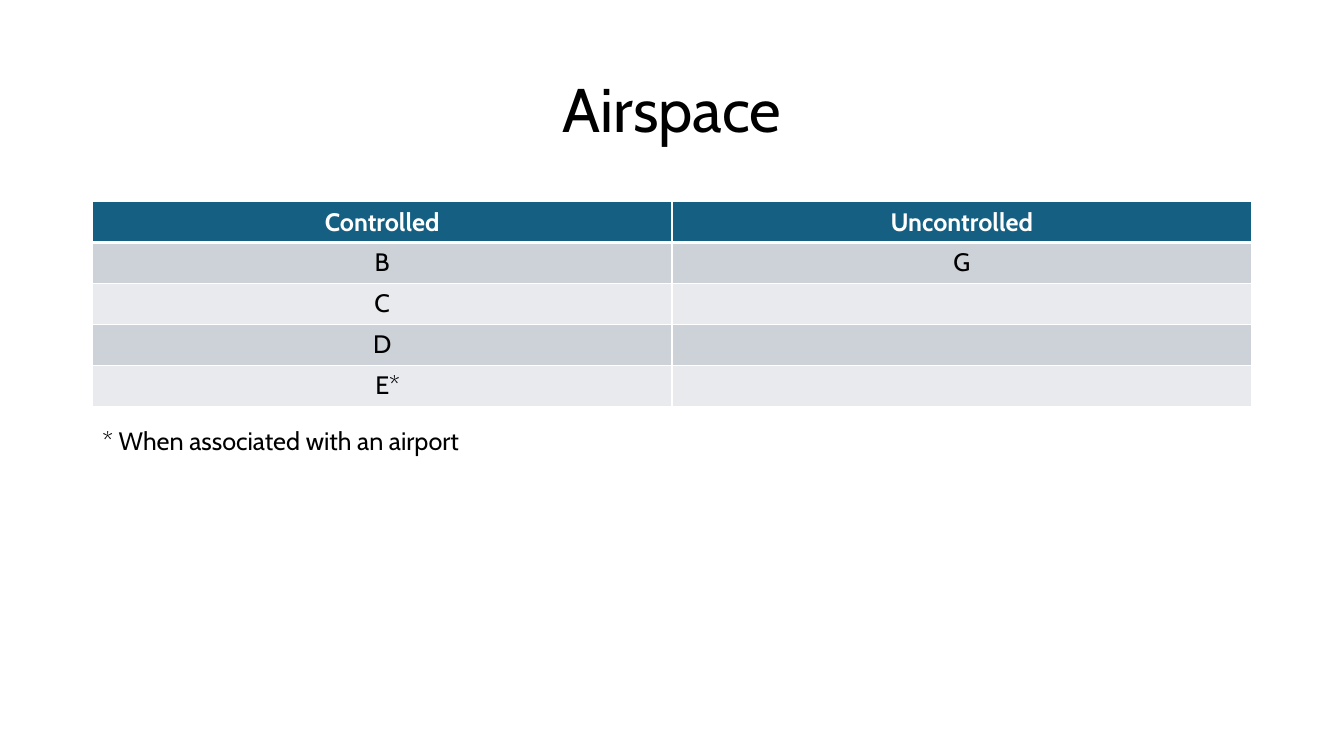
from lxml.etree import SubElement
from pptx import Presentation
from pptx.dml.color import RGBColor
from pptx.enum.text import MSO_ANCHOR as Anchor, PP_ALIGN as Align
from pptx.oxml.ns import qn
from pptx.util import Emu, Pt

EMU_PER_PX = 9525
FONT = "Cabin"
BLACK, WHITE = "000000", "FFFFFF"
HEADER_FILL = "156082"
BAND_FILLS = ("CCD2D8", "E8EAED")
LEFT, CONTENT_WIDTH = 88, 1104
TABLE_TOP, ROW_HEIGHT = 192, 39
AIRSPACE_CLASSES = [
    ("Controlled", "Uncontrolled"),
    ("B", "G"),
    ("C", ""),
    ("D", ""),
    ("E*", ""),
]


def px(length):
    return Emu(length * EMU_PER_PX)


def color(hex_code):
    return RGBColor.from_string(hex_code)


def write(frame, text, size=18, ink=BLACK, bold=False, align=Align.LEFT, spacing=None):
    paragraph = frame.paragraphs[0]
    paragraph.alignment = align
    paragraph.line_spacing = spacing
    font = paragraph.font
    if text:
        run = paragraph.add_run()
        run.text = text
        font = run.font
    font.name = FONT
    font.size = Pt(size)
    font.bold = bold
    font.color.rgb = color(ink)


def add_text(slide, text, top, height, anchor=Anchor.TOP, **text_format):
    frame = slide.shapes.add_textbox(
        px(LEFT), px(top), px(CONTENT_WIDTH), px(height)).text_frame
    frame.word_wrap = True
    frame.vertical_anchor = anchor
    write(frame, text, **text_format)


def add_borders(cell, **widths):
    """Draw white cell borders; widths are points keyed by L, R, T and B."""
    properties = cell._tc.get_or_add_tcPr()
    for side, width in widths.items():
        line = SubElement(properties, qn(f"a:ln{side}"), w=str(Pt(width)))
        fill = SubElement(line, qn("a:solidFill"))
        SubElement(fill, qn("a:srgbClr"), val=WHITE)


def add_airspace_table(slide, rows):
    columns = len(rows[0])
    table = slide.shapes.add_table(
        len(rows), columns, px(LEFT), px(TABLE_TOP),
        px(CONTENT_WIDTH), px(ROW_HEIGHT * len(rows))).table
    for row_index, labels in enumerate(rows):
        header = row_index == 0
        row_fill = HEADER_FILL if header else BAND_FILLS[(row_index - 1) % 2]
        for column_index, label in enumerate(labels):
            cell = table.cell(row_index, column_index)
            add_borders(cell, L=1, R=1, T=3 if row_index == 1 else 1,
                        B=3 if header else 1)
            cell.fill.solid()
            cell.fill.fore_color.rgb = color(row_fill)
            if label.endswith("*"):
                cell.margin_left = px(20)
            write(cell.text_frame, label, ink=WHITE if header else BLACK,
                  bold=header, align=Align.CENTER)


def main():
    deck = Presentation()
    deck.slide_width, deck.slide_height = px(1280), px(720)
    slide = deck.slides.add_slide(deck.slide_layouts[6])
    add_text(slide, "Airspace", 38, 139, anchor=Anchor.MIDDLE,
             size=44, align=Align.CENTER, spacing=0.9)
    add_airspace_table(slide, AIRSPACE_CLASSES)
    add_text(slide, "* When associated with an airport", 400, 39)
    deck.save("out.pptx")


if __name__ == "__main__":
    main()
